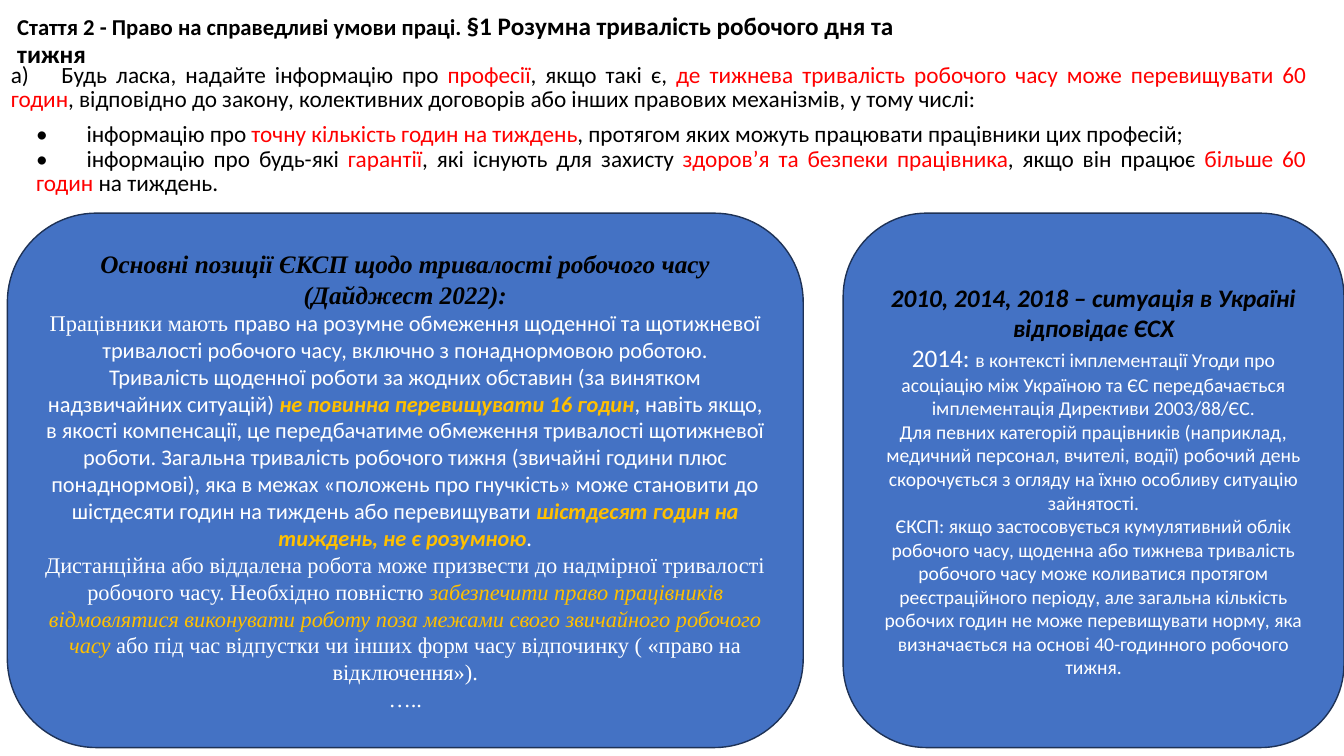
from pptx import Presentation
from pptx.dml.color import RGBColor
from pptx.enum.shapes import MSO_SHAPE
from pptx.enum.text import MSO_ANCHOR, PP_ALIGN
from pptx.util import Pt

PX = 9525
ROUND = MSO_SHAPE.ROUNDED_RECTANGLE
MID, TOP = MSO_ANCHOR.MIDDLE, MSO_ANCHOR.TOP
LEFT, MIDDLE, JUST = PP_ALIGN.LEFT, PP_ALIGN.CENTER, PP_ALIGN.JUSTIFY
INK = {"black": "000000", "white": "FFFFFF", "red": "FF0000",
       "gold": "FFC000", "blue": "4472C4", "navy": "1E3256"}
SANS, SERIF = "Calibri", "Times New Roman"


def color(name):
    return RGBColor.from_string(INK[name])


def write(frame, text, first=False, align=MIDDLE, lead=None, before=0, after=0,
          indent=0, **base):
    """Add a paragraph; text is a list of (words, format) runs."""
    para = frame.paragraphs[0] if first else frame.add_paragraph()
    para.alignment = align
    para.line_spacing = lead
    para.space_before, para.space_after = Pt(before), Pt(after)
    if indent:
        props = para._p.get_or_add_pPr()
        props.set("marL", str(indent * PX))
        props.set("indent", "0")
    for words, style in text:
        look = {"font": SANS, "ink": "white", "bold": False, "slant": False} | base | style
        run = para.add_run()
        run.text = words
        run.font.name, run.font.size = look["font"], Pt(look["size"])
        run.font.bold, run.font.italic = look["bold"], look["slant"]
        run.font.color.rgb = color(look["ink"])


deck = Presentation()
deck.slide_width, deck.slide_height = 1280 * PX, 720 * PX
slide = deck.slides.add_slide(deck.slide_layouts[6])

# Text boxes and cards
frames = {}
for name, area, anchor in [("title", (7, 9, 921, 61), MID),
                           ("body", (1, 56, 1252, 146), TOP),
                           ("rules", (7, 203, 758, 509), MID),
                           ("state", (803, 203, 477, 509), MID)]:
    place = [n * PX for n in area]
    if name in ("title", "body"):
        shape = slide.shapes.add_textbox(*place)
    else:
        shape = slide.shapes.add_shape(ROUND, *place)
        shape.shadow.inherit = False
        shape.fill.solid()
        shape.fill.fore_color.rgb = color("blue")
        shape.line.color.rgb = color("navy")
        shape.line.width = Pt(1)
    frames[name] = shape.text_frame
    frames[name].word_wrap = True
    frames[name].vertical_anchor = anchor

# Run formats
plain, red = {}, {"ink": "red"}
gold = {"ink": "gold", "slant": True}
strong = gold | {"bold": True}
head = {"size": 18, "ink": "black", "bold": True, "slant": True}

# Title
write(frames["title"], [
    ("Стаття 2 - Право на справедливі умови праці. ", {"size": 16.2}),
    ("§1 Розумна тривалість робочого дня та тижня", {"size": 18}),
], first=True, align=LEFT, lead=0.9, ink="black", bold=True)

# Question and its points
ask = {"align": JUST, "lead": 0.87, "size": 16.6, "ink": "black"}
write(frames["body"], [
    ("a)\tБудь ласка, надайте інформацію про ", plain),
    ("професії", red),
    (", якщо такі є, ", plain),
    ("де тижнева тривалість робочого часу може перевищувати 60 годин", red),
    (", відповідно до закону, колективних договорів або інших правових механізмів, "
     "у тому числі:", plain),
], first=True, before=10, after=8, **ask)
points = [
    [("•\tінформацію про ", plain),
     ("точну кількість годин на тиждень", red),
     (", протягом яких можуть працювати працівники цих професій;", plain)],
    [("•\tінформацію про будь-які ", plain),
     ("гарантії", red),
     (", які існують для захисту ", plain),
     ("здоров’я та безпеки працівника", red),
     (", якщо він працює ", plain),
     ("більше 60 годин ", red),
     ("на тиждень.", plain)],
]
for point in points:
    write(frames["body"], point, indent=24, **ask)

# Left card
rules = frames["rules"]
write(rules, [("Основні позиції ЄКСП щодо тривалості робочого часу (Дайджест 2022):", plain)],
      first=True, font=SERIF, **head)
write(rules, [
    ("Працівники мають ", {"font": SERIF}),
    ("право на розумне обмеження щоденної та щотижневої тривалості робочого часу, "
     "включно з понаднормовою роботою.", plain),
], size=16)
write(rules, [
    ("Тривалість щоденної роботи за жодних обставин (за винятком надзвичайних "
     "ситуацій) ", plain),
    ("не повинна перевищувати 16 годин", strong),
    (", навіть якщо, в якості компенсації, це передбачатиме обмеження тривалості "
     "щотижневої роботи. Загальна тривалість робочого тижня (звичайні години плюс "
     "понаднормові), яка в межах «положень про гнучкість» може становити до "
     "шістдесяти годин на тиждень або перевищувати ", plain),
    ("шістдесят годин на тиждень, не є розумною", strong),
    (".", plain),
], size=16)
write(rules, [
    ("Дистанційна або віддалена робота може призвести до надмірної тривалості "
     "робочого часу. Необхідно повністю ", plain),
    ("забезпечити право працівників відмовлятися виконувати роботу поза межами "
     "свого звичайного робочого часу ", gold),
    ("або під час відпустки чи інших форм часу відпочинку ( «право на "
     "відключення»).", plain),
], size=16, font=SERIF)
write(rules, [("…..", plain)], size=16, font=SERIF)

# Right card
state = frames["state"]
write(state, [("2010, 2014, 2018 – ситуація в Україні відповідає ЄСХ", plain)],
      first=True, **head)
write(state, [
    ("2014: ", {"size": 18}),
    ("в контексті імплементації Угоди про асоціацію між Україною та ЄС "
     "передбачається імплементація Директиви 2003/88/ЄС.", plain),
], size=14)
for words in [
    "Для певних категорій працівників (наприклад, медичний персонал, вчителі, водії) "
    "робочий день скорочується з огляду на їхню особливу ситуацію зайнятості.",
    "ЄКСП: якщо застосовується кумулятивний облік робочого часу, щоденна або тижнева "
    "тривалість робочого часу може коливатися протягом реєстраційного періоду, але "
    "загальна кількість робочих годин не може перевищувати норму, яка визначається "
    "на основі 40-годинного робочого тижня.",
]:
    write(state, [(words, plain)], size=14)

deck.save("out.pptx")
